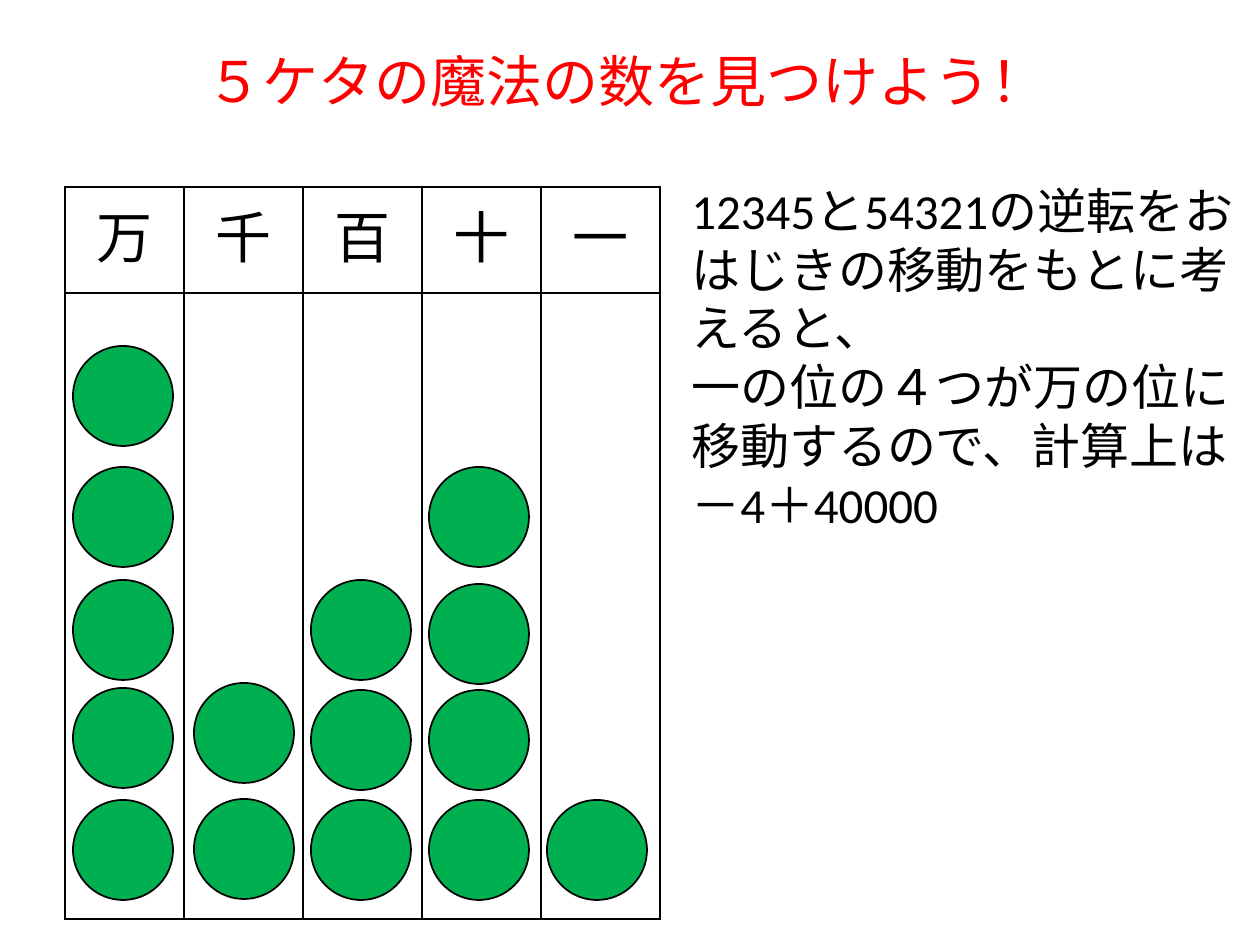
from lxml.etree import SubElement
from pptx import Presentation
from pptx.dml.color import RGBColor
from pptx.enum.shapes import MSO_SHAPE
from pptx.enum.text import MSO_ANCHOR, PP_ALIGN
from pptx.oxml.ns import qn
from pptx.util import Emu, Pt

TITLE = "５ケタの魔法の数を見つけよう！"
EXPLANATION = [
    "12345と54321の逆転をおはじきの移動をもとに考えると、",
    "一の位の４つが万の位に移動するので、計算上は",
    "－4＋40000",
]
PLACES = [
    ("万", 73, [346, 467, 580, 688, 800]),
    ("千", 194, [683, 799]),
    ("百", 311, [580, 690, 800]),
    ("十", 429, [467, 584, 690, 800]),
    ("一", 547, [800]),
]
BLACK, RED, GREEN = "000000", "FF0000", "00B050"
COLUMN_WIDTH, ROW_HEIGHTS, COUNTER_SIZE = 119, [106, 626], 100


def px(value):
    """Convert pixels at 126 to the inch into EMU."""
    return Emu(round(value * 914400 / 126))


def rgb(color):
    """Turn a hex string into a colour."""
    return RGBColor.from_string(color)


def write(frame, lines, size, color, alignment):
    """Fill a text frame with one paragraph per line."""
    frame.word_wrap = True
    for index, line in enumerate(lines):
        paragraph = frame.add_paragraph() if index else frame.paragraphs[0]
        paragraph.text = line
        paragraph.alignment = alignment
        paragraph.font.name = "Calibri"
        paragraph.font.size = Pt(size)
        paragraph.font.bold = False
        paragraph.font.color.rgb = rgb(color)


def add_text(slide, box, *style):
    """Add a text box and return its frame."""
    frame = slide.shapes.add_textbox(*map(px, box)).text_frame
    write(frame, *style)
    return frame


def outline_cell(cell):
    """Give a cell thin black borders and no fill."""
    properties = cell._tc.get_or_add_tcPr()
    for side in ("a:lnL", "a:lnR", "a:lnT", "a:lnB"):
        border = SubElement(properties, qn(side), w=str(Pt(1)))
        fill = SubElement(border, qn("a:solidFill"))
        SubElement(fill, qn("a:srgbClr"), val=BLACK)
    cell.fill.background()


def add_place_table(slide):
    """Add the place value table."""
    width, height = COLUMN_WIDTH * len(PLACES), sum(ROW_HEIGHTS)
    table = slide.shapes.add_table(
        len(ROW_HEIGHTS), len(PLACES), px(65), px(187), px(width), px(height)
    ).table
    table.first_row = table.horz_banding = False
    for row, row_height in zip(table.rows, ROW_HEIGHTS):
        row.height = px(row_height)
    for index, (place, _, _) in enumerate(PLACES):
        table.columns[index].width = px(COLUMN_WIDTH)
        write(table.cell(0, index).text_frame, [place], 32, BLACK, PP_ALIGN.CENTER)
    for cell in table.iter_cells():
        outline_cell(cell)


def add_counter(slide, left, top):
    """Add one round counter."""
    counter = slide.shapes.add_shape(
        MSO_SHAPE.FLOWCHART_CONNECTOR,
        px(left), px(top), px(COUNTER_SIZE), px(COUNTER_SIZE),
    )
    counter.shadow.inherit = False
    counter.fill.solid()
    counter.fill.fore_color.rgb = rgb(GREEN)
    counter.line.color.rgb = rgb(BLACK)
    counter.line.width = Pt(1)


def main():
    """Build and save the slide."""
    presentation = Presentation()
    presentation.slide_width, presentation.slide_height = px(1260), px(945)
    slide = presentation.slides.add_slide(presentation.slide_layouts[6])
    title = add_text(slide, (60, 16, 1134, 129), [TITLE], 32, RED, PP_ALIGN.CENTER)
    title.vertical_anchor = MSO_ANCHOR.MIDDLE
    add_place_table(slide)
    for _, left, tops in PLACES:
        for top in tops:
            add_counter(slide, left, top)
    add_text(slide, (679, 174, 581, 369), EXPLANATION, 28, BLACK, PP_ALIGN.LEFT)
    presentation.save("out.pptx")


if __name__ == "__main__":
    main()
